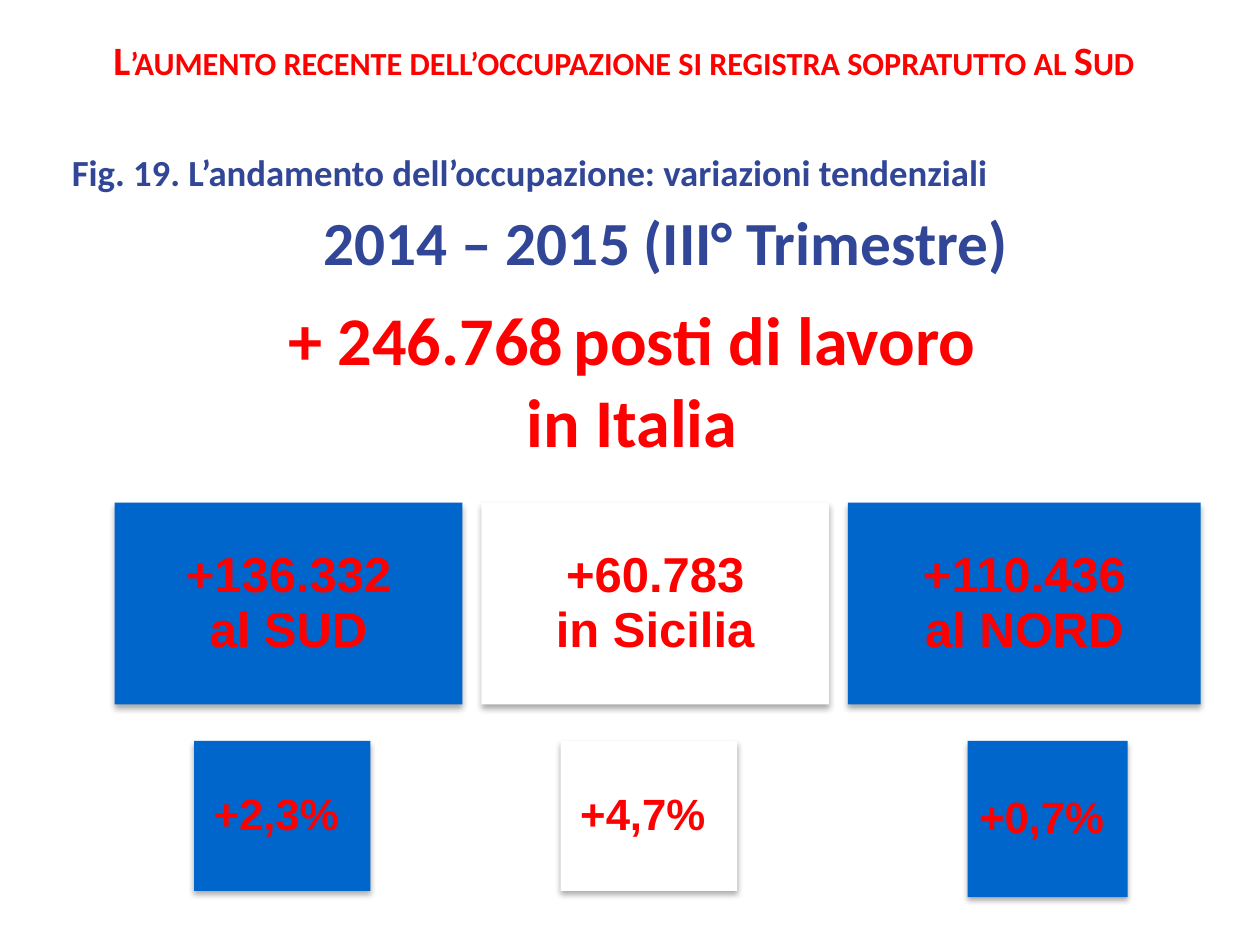
import pptx
import pptx.dml.color
import pptx.enum.shapes
import pptx.enum.text
import pptx.oxml
import pptx.oxml.ns
import pptx.util
from pptx.util import Inches

RGBColor = pptx.dml.color.RGBColor
PP_ALIGN = pptx.enum.text.PP_ALIGN
MSO_ANCHOR = pptx.enum.text.MSO_ANCHOR
RED = RGBColor(0xFF, 0x00, 0x00)
NAVY = RGBColor(0x31, 0x46, 0x97)
BLUE = RGBColor(0x00, 0x66, 0xCC)
WHITE = RGBColor(0xFF, 0xFF, 0xFF)

TITLE = "L’aumento recente dell’occupazione si registra sopratutto al Sud"
CAPTION = "Fig. 19. L’andamento dell’occupazione: variazioni tendenziali"
PERIOD = "2014 – 2015 (III° Trimestre)"
TOTAL = [("+ 246.768", 39), (" ", 25), ("posti di lavoro in Italia", 39)]

# jobs, share, fill, jobs box (left, width), share box (left, width, height)
AREAS = [
    (["+136.332", "al SUD"], "+2,3% ", BLUE, (0.91, 2.76), (1.54, 1.4, 1.19)),
    (["+60.783", "in Sicilia"], "+4,7% ", WHITE, (3.82, 2.76), (4.45, 1.4, 1.19)),
    (["+110.436", "al NORD"], "+0,7% ", BLUE, (6.73, 2.8), (7.68, 1.27, 1.24)),
]
JOBS_TOP, JOBS_HEIGHT, SHARE_TOP = 3.99, 1.6, 5.88

SHADOW = (
    '<a:effectLst %s><a:outerShdw blurRad="44450" dist="27940" dir="5400000" '
    'algn="ctr" rotWithShape="0"><a:srgbClr val="000000"><a:alpha val="32000"/>'
    "</a:srgbClr></a:outerShdw></a:effectLst>" % pptx.oxml.ns.nsdecls("a")
)


def set_frame(tf, anchor=MSO_ANCHOR.TOP):
    tf.word_wrap = True
    tf.auto_size = pptx.enum.text.MSO_AUTO_SIZE.NONE
    tf.vertical_anchor = anchor
    tf.margin_left = tf.margin_right = Inches(0.09)
    tf.margin_top = tf.margin_bottom = Inches(0.04)


def style(p, size, color, name="Calibri", align=PP_ALIGN.CENTER, spacing=1.0):
    p.alignment = align
    p.line_spacing = spacing
    p.font.name = name
    p.font.bold = True
    p.font.color.rgb = color
    if size:
        p.font.size = pptx.util.Pt(size)


def add_text(s, left, top, width, height):
    tb = s.shapes.add_textbox(*map(Inches, (left, top, width, height)))
    set_frame(tb.text_frame)
    return tb.text_frame.paragraphs[0]


def add_box(s, lines, size, fill, left, top, width, height):
    sp = s.shapes.add_shape(pptx.enum.shapes.MSO_SHAPE.RECTANGLE,
                            *map(Inches, (left, top, width, height)))
    sp.fill.solid()
    sp.fill.fore_color.rgb = fill
    sp.line.fill.background()
    sp._element.spPr.append(pptx.oxml.parse_xml(SHADOW))
    tf = sp.text_frame
    set_frame(tf, MSO_ANCHOR.MIDDLE)
    tf.text = "\n".join(lines)
    for p in tf.paragraphs:
        style(p, size, RED, "Arial", spacing=0.93)


def main():
    prs = pptx.Presentation()
    prs.slide_width, prs.slide_height = Inches(10), Inches(7.5)
    s = prs.slides.add_slide(prs.slide_layouts[5])

    title = s.shapes.title
    title.left, title.top = Inches(0.61), Inches(0.24)
    title.width, title.height = Inches(8.68), Inches(0.48)
    set_frame(title.text_frame)
    p = title.text_frame.paragraphs[0]
    r = p.add_run()
    r.text = TITLE
    r._r.get_or_add_rPr().set("cap", "small")
    style(p, 23, RED)

    p = add_text(s, 0.48, 1.17, 9.17, 0.43)
    p.text = CAPTION
    style(p, 21, NAVY, align=PP_ALIGN.LEFT, spacing=0.97)

    p = add_text(s, 2.29, 1.58, 5.99, 0.68)
    p.text = PERIOD
    style(p, 35, NAVY)

    p = add_text(s, 1.94, 2.32, 6.15, 1.4)
    for text, size in TOTAL:
        r = p.add_run()
        r.text = text
        r.font.size = pptx.util.Pt(size)
    style(p, None, RED)

    for jobs, share, fill, (left, width), (x, w, h) in AREAS:
        add_box(s, jobs, 28, fill, left, JOBS_TOP, width, JOBS_HEIGHT)
        add_box(s, [share], 25, fill, x, SHARE_TOP, w, h)

    prs.save("out.pptx")


if __name__ == "__main__":
    main()
